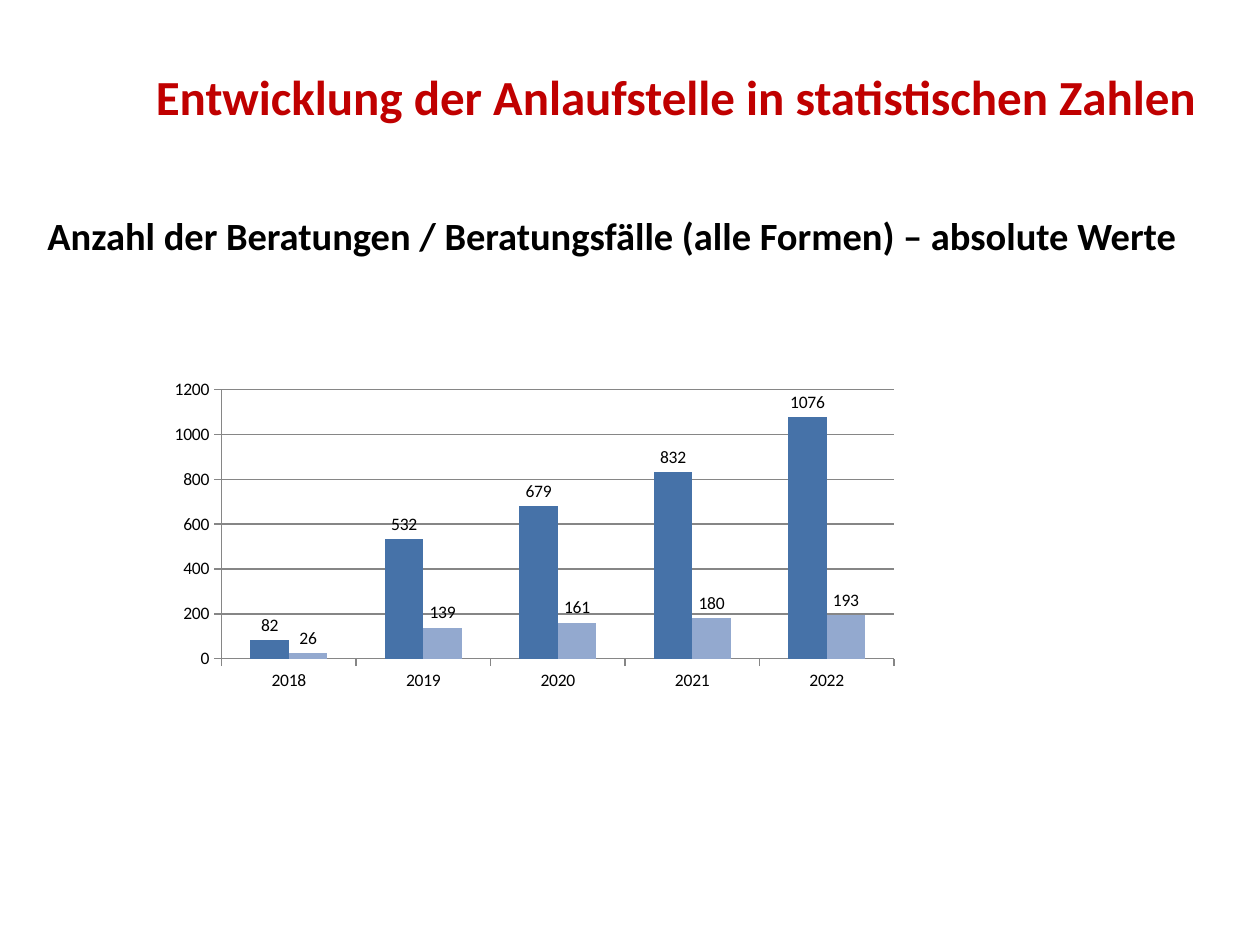
from lxml import etree
from pptx import Presentation
from pptx.chart.data import CategoryChartData
from pptx.dml.color import RGBColor
from pptx.enum import chart as charts, text
from pptx.oxml import ns
from pptx.util import Pt

FONT = "Calibri"
BLACK, RED, GRAY = "000000", "C00000", "868686"
YEARS = ["2018", "2019", "2020", "2021", "2022"]
SERIES = [
    ("Beratungen", [82, 532, 679, 832, 1076], "4672A8"),
    ("Beratungsfälle", [26, 139, 161, 180, 193], "93A9CF"),
]


def color(hex_value):
    return RGBColor.from_string(hex_value)


def set_font(font, size, hex_value, bold=False):
    font.name, font.size, font.bold = FONT, Pt(size), bold
    font.color.rgb = color(hex_value)


def add_text(slide, box, wording, size, hex_value, anchor, top_inset=3.6):
    shape = slide.shapes.add_textbox(*map(Pt, box))
    frame = shape.text_frame
    frame.word_wrap = True
    frame.vertical_anchor = anchor
    frame.margin_top = Pt(top_inset)
    paragraph = frame.paragraphs[0]
    paragraph.text = wording
    set_font(paragraph.font, size, hex_value, bold=True)


def set_plot_layout(chart, x, y, width, height):
    """Fix the inner plot area, in fractions of the chart."""
    plot_area = chart.element.find(".//" + ns.qn("c:plotArea"))
    layout = plot_area.find(ns.qn("c:layout"))
    if layout is None:
        layout = etree.Element(ns.qn("c:layout"))
        plot_area.insert(0, layout)
    manual = etree.SubElement(layout, ns.qn("c:manualLayout"))
    settings = [("layoutTarget", "inner"), ("xMode", "edge"), ("yMode", "edge"),
                ("x", x), ("y", y), ("w", width), ("h", height)]
    for name, value in settings:
        etree.SubElement(manual, ns.qn("c:" + name)).set("val", str(value))


def style_axis(axis):
    axis.major_tick_mark = charts.XL_TICK_MARK.OUTSIDE
    axis.minor_tick_mark = charts.XL_TICK_MARK.NONE
    axis.format.line.color.rgb = color(GRAY)
    axis.format.line.width = Pt(0.75)


def add_column_chart(slide, box):
    data = CategoryChartData()
    data.categories = YEARS
    for name, values, _ in SERIES:
        data.add_series(name, values)
    chart = slide.shapes.add_chart(
        charts.XL_CHART_TYPE.COLUMN_CLUSTERED, *map(Pt, box), data).chart
    chart.has_title = chart.has_legend = False
    set_font(chart.font, 10, BLACK)
    set_plot_layout(chart, 0.11, 0.08, 0.89, 0.81)

    style_axis(chart.category_axis)
    value_axis = chart.value_axis
    style_axis(value_axis)
    value_axis.minimum_scale, value_axis.maximum_scale = 0, 1200
    value_axis.major_unit = 200
    value_axis.has_major_gridlines = True
    gridline = value_axis.major_gridlines.format.line
    gridline.color.rgb, gridline.width = color(GRAY), Pt(0.75)

    plot = chart.plots[0]
    plot.gap_width, plot.overlap = 150, 0
    plot.vary_by_categories = False
    for series, (_, _, hex_value) in zip(plot.series, SERIES):
        series.format.fill.solid()
        series.format.fill.fore_color.rgb = color(hex_value)
        labels = series.data_labels
        labels.show_value = True
        labels.position = charts.XL_LABEL_POSITION.OUTSIDE_END
        set_font(labels.font, 10, BLACK)


def main():
    presentation = Presentation()
    presentation.slide_width, presentation.slide_height = Pt(720), Pt(540)
    slide = presentation.slides.add_slide(presentation.slide_layouts[6])
    add_text(slide, (82, 21.6, 623.5, 67),
             "Entwicklung der Anlaufstelle in statistischen Zahlen",
             28, RED, text.MSO_ANCHOR.MIDDLE)
    add_text(slide, (20, 111.6, 686, 371),
             "Anzahl der Beratungen / Beratungsfälle (alle Formen) – absolute Werte",
             22, BLACK, text.MSO_ANCHOR.TOP, top_inset=9.5)
    add_column_chart(slide, (79.2, 207.4, 432, 190))
    presentation.save("out.pptx")


if __name__ == "__main__":
    main()
